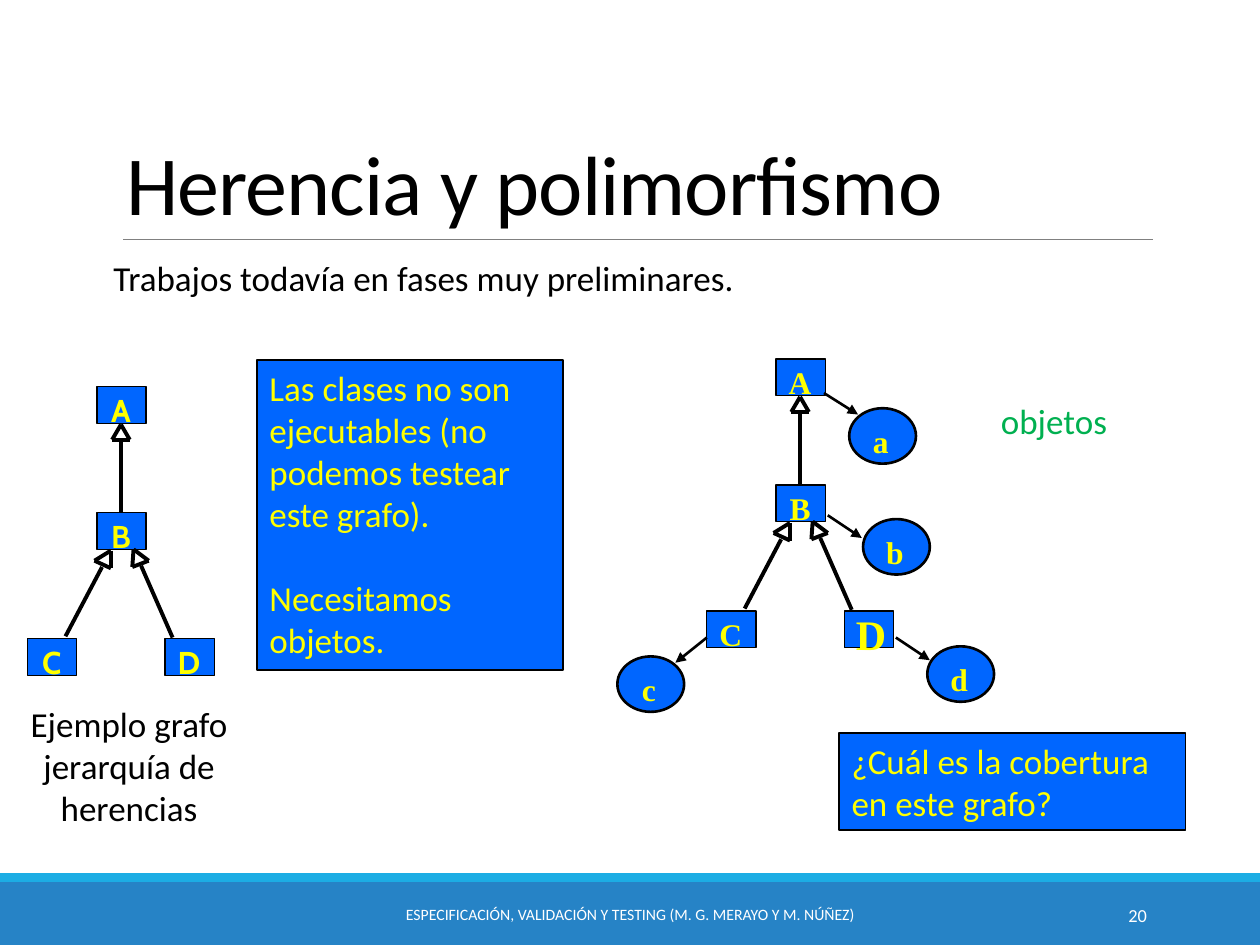
"""Build the slide on inheritance and polymorphism with its two class graphs."""
from lxml.etree import SubElement
from pptx import Presentation
from pptx.dml.color import RGBColor
from pptx.enum.shapes import MSO_CONNECTOR, MSO_SHAPE
from pptx.enum.text import MSO_ANCHOR, MSO_AUTO_SIZE, PP_ALIGN
from pptx.oxml.ns import qn
from pptx.util import Inches, Pt

BLACK = RGBColor(0, 0, 0)
WHITE = RGBColor(255, 255, 255)
GREY = RGBColor(0x80, 0x80, 0x80)
BLUE = RGBColor(0, 0x66, 0xFF)
YELLOW = RGBColor(255, 255, 0)
GREEN = RGBColor(0, 0xB0, 0x50)
BARS = [((0, 7, 10, 0.5), RGBColor(0x26, 0x83, 0xC6)),
        ((0, 6.93, 10, 0.07), RGBColor(0x1C, 0xAD, 0xE4))]
LEFT, CENTER, RIGHT = PP_ALIGN.LEFT, PP_ALIGN.CENTER, PP_ALIGN.RIGHT

TITLE = "Herencia y polimorfismo"
BODY = "Trabajos todavía en fases muy preliminares."
TEXTS = [
    ((3.02, 7.06, 3.96, 0.4), "ESPECIFICACIÓN, VALIDACIÓN Y TESTING (M. G. MERAYO Y M. NÚÑEZ)",
     9, WHITE, CENTER),
    ((8.12, 7.06, 1.08, 0.4), "20", 10.5, WHITE, RIGHT),
    ((-0.16, 5.52, 2.37, 1.11), "Ejemplo grafo jerarquía de herencias", 20, BLACK, CENTER),
    ((7.5, 3.12, 1.73, 0.44), "objetos", 20, GREEN, CENTER),
]
NOTES = [
    ((2.04, 2.86, 2.43, 2.46),
     ["Las clases no son ejecutables (no podemos testear este grafo).", "Necesitamos objetos."]),
    ((6.66, 5.82, 2.75, 0.77), ["¿Cuál es la cobertura en este grafo?"]),
]
NODES = [("A", 0.77, 3.07), ("B", 0.77, 4.07), ("C", 0.22, 5.07), ("D", 1.31, 5.07)]
HEADS = [[(0.89, 3.49), (0.96, 3.37), (1.03, 3.49)],
         [(0.75, 4.45), (0.88, 4.37), (0.88, 4.51)],
         [(1.05, 4.5), (1.06, 4.36), (1.18, 4.45)]]
STEMS = [((0.96, 3.5), (0.96, 4.07)), ((0.81, 4.5), (0.52, 5.05)),
         ((1.12, 4.49), (1.37, 5.06))]
TREES = [(0, 0, "Cabin", {}), (5.39, -0.22, "Times New Roman", {"D": 24})]
OBJECTS = [("a", 6.74, 3.24, (6.54, 3.12), (6.81, 3.29)),
           ("b", 6.85, 4.12, (6.57, 4.09), (6.84, 4.27)),
           ("d", 7.36, 5.13, (7.11, 5.06), (7.38, 5.24)),
           ("c", 4.9, 5.21, (5.61, 5.06), (5.36, 5.26))]


def style(para, size, color, align=LEFT, face="Calibri", bold=False):
    para.alignment = align
    font = para.font
    font.name, font.size, font.bold = face, Pt(size), bold
    font.color.rgb = color


def place(shape, box):
    shape.left, shape.top, shape.width, shape.height = map(Inches, box)


def add_text(slide, box, text, size, color, align=CENTER, face="Calibri", bold=False, wrap=True):
    frame = slide.shapes.add_textbox(*map(Inches, box)).text_frame
    frame.word_wrap = wrap
    frame.vertical_anchor = MSO_ANCHOR.MIDDLE
    frame.text = text
    style(frame.paragraphs[0], size, color, align, face, bold)


def add_label(slide, x, y, width, text, face, size=18, wrap=True):
    high = size / 60 + 0.1
    add_text(slide, (x - width / 2, y - high / 2, width, high), text, size,
             YELLOW, CENTER, face, True, wrap)


def add_block(slide, kind, box, fill, weight=0):
    shape = slide.shapes.add_shape(kind, *map(Inches, box))
    shape.shadow.inherit = False
    shape.fill.solid()
    shape.fill.fore_color.rgb = fill
    if weight:
        shape.line.color.rgb = BLACK
        shape.line.width = Pt(weight)
    else:
        shape.line.fill.background()
    return shape


def add_line(slide, start, end, weight, color=BLACK, arrow=False):
    line = slide.shapes.add_connector(MSO_CONNECTOR.STRAIGHT, *map(Inches, (*start, *end)))
    line.line.color.rgb = color
    line.line.width = Pt(weight)
    if arrow:
        SubElement(line.line._get_or_add_ln(), qn("a:tailEnd"), type="triangle")
    SubElement(line._element.spPr, qn("a:effectLst"))


def add_note(slide, box, texts):
    frame = add_block(slide, MSO_SHAPE.RECTANGLE, box, BLUE, 1).text_frame
    frame.word_wrap = True
    frame.vertical_anchor = MSO_ANCHOR.TOP
    frame.text = "\n".join(texts)
    for i, para in enumerate(frame.paragraphs):
        style(para, 20, YELLOW)
        para.space_before = Pt(24 if i else 0)


def add_tree(slide, dx, dy, face, sizes):
    for name, x, y in NODES:
        x, y = x + dx, y + dy
        add_block(slide, MSO_SHAPE.RECTANGLE, (x, y, 0.39, 0.29), BLUE, 0.75)
        add_label(slide, x + 0.19, y + 0.18, 0.39, name, face, sizes.get(name, 18))
    edges = [pair for head in HEADS for pair in zip(head, head[1:] + head[:1])]
    for start, end in edges + STEMS:
        add_line(slide, (start[0] + dx, start[1] + dy), (end[0] + dx, end[1] + dy), 2.25)


def add_heads(slide):
    title, body = slide.placeholders
    place(title, (0.9, 0.31, 8.67, 1.59))
    place(body, (0.9, 2.02, 8.25, 4.4))
    for shape, text, size, anchor in ((title, TITLE, 48, MSO_ANCHOR.BOTTOM),
                                      (body, BODY, 20, MSO_ANCHOR.TOP)):
        frame = shape.text_frame
        frame.text = text
        frame.word_wrap = True
        frame.auto_size = MSO_AUTO_SIZE.NONE
        frame.vertical_anchor = anchor
        style(frame.paragraphs[0], size, BLACK)
    head = title.text_frame.paragraphs[0]
    head.line_spacing = 0.85
    head.runs[0].font._element.set("spc", "-50")
    frame = body.text_frame
    frame.margin_left = frame.margin_right = 0
    para = frame.paragraphs[0]
    para.line_spacing = 0.9
    para.space_before, para.space_after = Pt(12), Pt(2)
    props = para._p.get_or_add_pPr()
    props.set("marL", "0")
    props.set("indent", "0")
    props.insert_element_before(props.makeelement(qn("a:buNone")), "a:tabLst", "a:defRPr", "a:extLst")


def main():
    deck = Presentation()
    deck.slide_width, deck.slide_height = Inches(10), Inches(7.5)
    slide = deck.slides.add_slide(deck.slide_layouts[1])
    add_heads(slide)
    for box, fill in BARS:
        add_block(slide, MSO_SHAPE.RECTANGLE, box, fill)
    add_line(slide, (0.98, 1.9), (9.15, 1.9), 0.5, GREY)
    for item in TEXTS:
        add_text(slide, *item)
    for tree in TREES:
        add_tree(slide, *tree)
    for name, x, y, start, end in OBJECTS:
        add_block(slide, MSO_SHAPE.OVAL, (x, y, 0.53, 0.44), BLUE, 1.5)
        add_label(slide, x + 0.25, y + 0.26, 0.33, name, "Times New Roman", wrap=False)
        add_line(slide, start, end, 1.5, arrow=True)
    for note in NOTES:
        add_note(slide, *note)
    deck.save("out.pptx")


if __name__ == "__main__":
    main()
